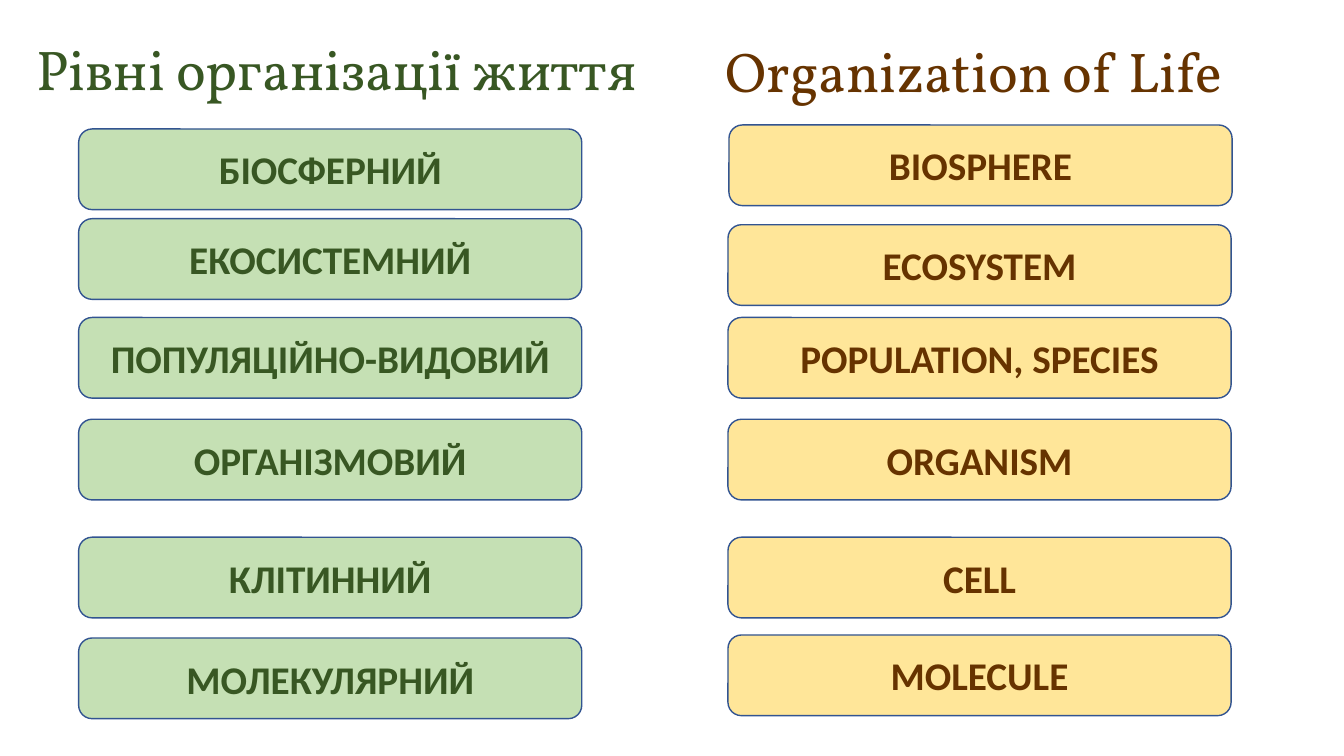
from dataclasses import dataclass

from pptx import Presentation
from pptx.dml.color import RGBColor
from pptx.enum.shapes import MSO_SHAPE
from pptx.enum.text import MSO_ANCHOR, MSO_AUTO_SIZE, PP_ALIGN
from pptx.slide import Slide
from pptx.text.text import TextFrame
from pptx.util import Emu, Pt

ROUNDED = MSO_SHAPE.ROUNDED_RECTANGLE
MIDDLE = MSO_ANCHOR.MIDDLE
LEFT, CENTER = PP_ALIGN.LEFT, PP_ALIGN.CENTER
NO_FIT, GROW = MSO_AUTO_SIZE.NONE, MSO_AUTO_SIZE.SHAPE_TO_FIT_TEXT

EMU_PER_PX = 9144  # 100 px to the inch
LEVEL_W, LEVEL_H = 499, 80
TITLE_ONLY = 5

COLORS = {
    "green_text": "385723",
    "green_fill": "C5E0B4",
    "brown_text": "663300",
    "yellow_fill": "FFE699",
    "outline": "325491",
}


@dataclass(frozen=True)
class Level:
    name: str
    left: int
    top: int


@dataclass(frozen=True)
class Column:
    text_color: str
    fill_color: str
    levels: tuple[Level, ...]


UKRAINIAN = Column("green_text", "green_fill", (
    Level("МОЛЕКУЛЯРНИЙ", 78, 633),
    Level("КЛІТИННИЙ", 78, 533),
    Level("ОРГАНІЗМОВИЙ", 78, 416),
    Level("ПОПУЛЯЦІЙНО-ВИДОВИЙ", 78, 315),
    Level("ЕКОСИСТЕМНИЙ", 78, 217),
    Level("БІОСФЕРНИЙ", 78, 128),
))
ENGLISH = Column("brown_text", "yellow_fill", (
    Level("MOLECULE", 722, 630),
    Level("CELL", 722, 533),
    Level("ORGANISM", 722, 416),
    Level("POPULATION, SPECIES", 722, 315),
    Level("ECOSYSTEM", 722, 223),
    Level("BIOSPHERE", 723, 124),
))


def px(n: int) -> Emu:
    return Emu(n * EMU_PER_PX)


def rgb(name: str) -> RGBColor:
    return RGBColor.from_string(COLORS[name])


def write(tf: TextFrame, text: str, font: str, size: int, color: str,
          align: PP_ALIGN, bold: bool = False) -> None:
    p = tf.paragraphs[0]
    p.alignment = align
    r = p.add_run()
    r.text = text
    r.font.name = font
    r.font.size = Pt(size)
    r.font.bold = bold
    r.font.color.rgb = rgb(color)


def add_title(slide: Slide, text: str, color: str) -> None:
    sp = slide.shapes.title
    sp.left, sp.top, sp.width, sp.height = px(26), px(24), px(629), px(95)
    tf = sp.text_frame
    tf.auto_size = NO_FIT
    tf.vertical_anchor = MIDDLE
    tf.paragraphs[0].line_spacing = 0.9
    write(tf, text, "Vollkorn", 40, color, LEFT)


def add_heading(slide: Slide, text: str, color: str) -> None:
    sp = slide.shapes.add_textbox(px(710), px(31), px(522), px(77))
    tf = sp.text_frame
    tf.word_wrap = False
    tf.auto_size = GROW
    write(tf, text, "Vollkorn", 40, color, LEFT)


def add_column(slide: Slide, column: Column) -> None:
    for level in column.levels:
        sp = slide.shapes.add_shape(ROUNDED, px(level.left), px(level.top),
                                    px(LEVEL_W), px(LEVEL_H))
        sp.shadow.inherit = False
        sp.fill.solid()
        sp.fill.fore_color.rgb = rgb(column.fill_color)
        sp.line.color.rgb = rgb("outline")
        sp.line.width = Pt(1)
        tf = sp.text_frame
        tf.word_wrap = True
        tf.vertical_anchor = MIDDLE
        write(tf, level.name, "Calibri", 28, column.text_color, CENTER, bold=True)


def main() -> None:
    prs = Presentation()
    prs.slide_width, prs.slide_height = px(1333), px(750)
    slide = prs.slides.add_slide(prs.slide_layouts[TITLE_ONLY])
    add_title(slide, "Рівні організації життя", UKRAINIAN.text_color)
    add_column(slide, UKRAINIAN)
    add_heading(slide, "Organization of Life", ENGLISH.text_color)
    add_column(slide, ENGLISH)
    prs.save("out.pptx")


if __name__ == "__main__":
    main()
